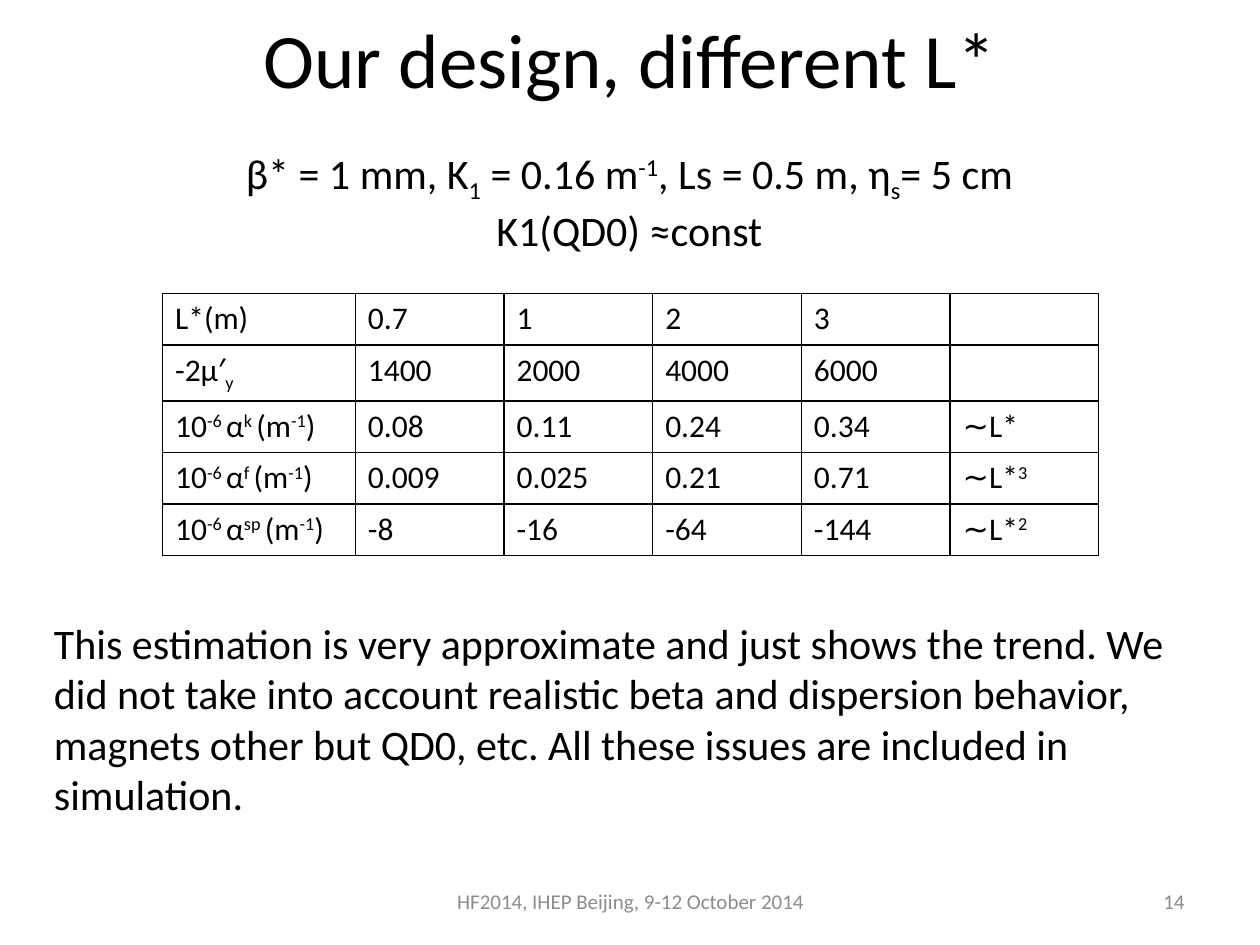
"""Build the slide comparing a final-focus design at different L* values."""
from lxml.etree import SubElement
from pptx import Presentation
from pptx.dml.color import RGBColor
from pptx.enum.text import MSO_ANCHOR as Anchor, PP_ALIGN as Align
from pptx.oxml.ns import qn
from pptx.util import Inches, Pt

BLACK = RGBColor(0x00, 0x00, 0x00)
WHITE = RGBColor(0xFF, 0xFF, 0xFF)
GRAY = RGBColor(0x8C, 0x8C, 0x8C)
BASELINES = {"^": "30000", "_": "-25000"}


def write(para, text, size, color=BLACK, align=Align.LEFT):
    """Write pieces split by |, where ^ raises a piece and _ lowers it."""
    para.alignment = align
    para.font.name, para.font.size = "Calibri", Pt(size)
    para.font.color.rgb = color
    for piece in filter(None, text.split("|")):
        span = para.add_run()
        span.text = piece.lstrip("^_")
        if piece[0] in BASELINES:
            span.font._element.set("baseline", BASELINES[piece[0]])


def add_text(place, lines, size, color=BLACK, align=Align.LEFT, anchor=Anchor.TOP):
    """Add a wrapping text box with one paragraph for each line."""
    box = slide.shapes.add_textbox(*map(Inches, place))
    frame = box.text_frame
    frame.word_wrap = True
    frame.vertical_anchor = anchor
    for index, line in enumerate(lines):
        para = frame.add_paragraph() if index else frame.paragraphs[0]
        write(para, line, size, color, align)


deck = Presentation()
deck.slide_width, deck.slide_height = Inches(10), Inches(7.5)
slide = deck.slides.add_slide(deck.slide_layouts[5])

title = slide.shapes.title
title.left, title.top = Inches(0.5), Inches(0)
title.width, title.height = Inches(9), Inches(0.92)
title.text_frame.vertical_anchor = Anchor.MIDDLE
write(title.text_frame.paragraphs[0], "Our design, different L*", 44, align=Align.CENTER)

add_text(
    (1.65, 1.12, 6.69, 0.91),
    ["β* = 1 mm, K|_1| = 0.16 m|^-1|, Ls = 0.5 m, η|_s|= 5 cm", "K1(QD0) ≈const"],
    24, align=Align.CENTER,
)
add_text(
    (0.33, 4.85, 9.37, 1.72),
    ["This estimation is very approximate and just shows the trend. We did not take "
     "into account realistic beta and dispersion behavior, magnets other but QD0, etc. "
     "All these issues are included in simulation."],
    24,
)

rows = [
    ["L*(m)", "0.7", "1", "2", "3", ""],
    ["-2μ′|_y", "1400", "2000", "4000", "6000", ""],
    ["10|^-6 |α|^k |(m|^-1|)", "0.08", "0.11", "0.24", "0.34", "∼L*"],
    ["10|^-6 |α|^f |(m|^-1|)", "0.009", "0.025", "0.21", "0.71", "∼L*|^3"],
    ["10|^-6 |α|^sp |(m|^-1|)", "-8", "-16", "-64", "-144", "∼L*|^2"],
]
frame = slide.shapes.add_table(
    len(rows), len(rows[0]), Inches(1.29), Inches(2.33), Inches(7.42), Inches(2.03)
)
table = frame.table
table.first_row = table.horz_banding = False
for index, column in enumerate(table.columns):
    column.width = Inches(1.18 if index else 1.53)
for row_index, values in enumerate(rows):
    table.rows[row_index].height = Inches(0.41)
    for column_index, value in enumerate(values):
        cell = table.cell(row_index, column_index)
        write(cell.text_frame.paragraphs[0], value, 18)
        properties = cell._tc.get_or_add_tcPr()
        for side in ("a:lnL", "a:lnR", "a:lnT", "a:lnB"):
            border = SubElement(properties, qn(side), w=str(Pt(1)))
            fill = SubElement(border, qn("a:solidFill"))
            SubElement(fill, qn("a:srgbClr"), val=str(BLACK))
        cell.fill.solid()
        cell.fill.fore_color.rgb = WHITE

add_text((7.17, 6.95, 2.33, 0.4), ["14"], 12, GRAY, Align.RIGHT, Anchor.MIDDLE)
add_text(
    (3.42, 6.95, 3.17, 0.4), ["HF2014, IHEP Beijing, 9-12 October 2014"],
    12, GRAY, Align.CENTER, Anchor.MIDDLE,
)

deck.save("out.pptx")
